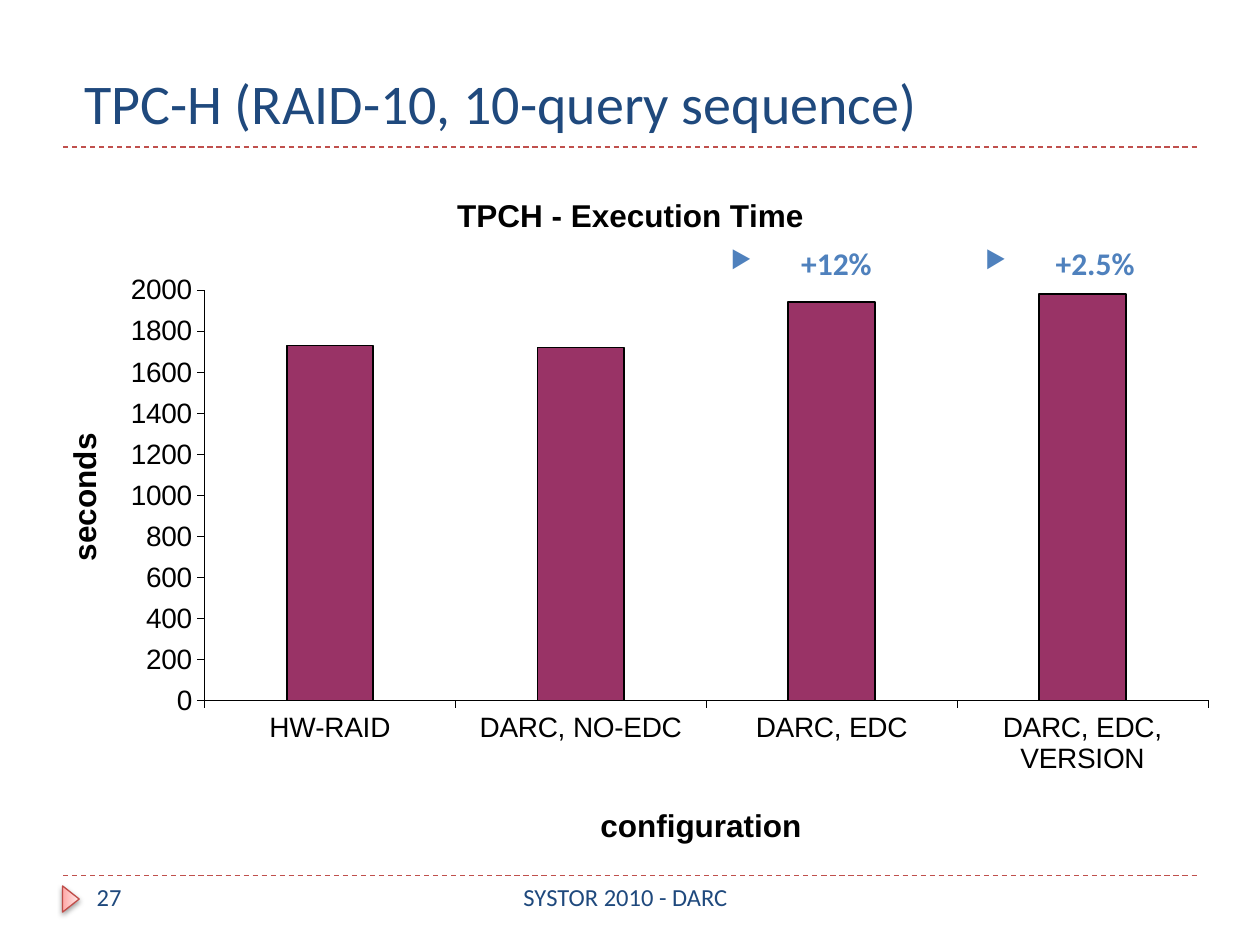
from copy import deepcopy

from lxml.etree import SubElement
from pptx import Presentation
from pptx.chart.data import CategoryChartData
from pptx.dml.color import RGBColor
from pptx.enum.chart import XL_CHART_TYPE, XL_TICK_MARK
from pptx.enum.dml import MSO_LINE
from pptx.enum.shapes import MSO_CONNECTOR, MSO_SHAPE
from pptx.enum.text import MSO_ANCHOR, PP_ALIGN
from pptx.oxml.ns import qn
from pptx.util import Pt

NAVY = RGBColor(0x1F, 0x49, 0x7D)
BLUE = RGBColor(0x4F, 0x81, 0xBD)
RED = RGBColor(0xC0, 0x50, 0x4D)
MARKER_EDGE = RGBColor(0xBF, 0x4C, 0x48)
MARKER_STOPS = [
    (0, RGBColor(0xFF, 0xA6, 0xA5)),
    (0.35, RGBColor(0xFF, 0xC0, 0xBF)),
    (1, RGBColor(0xFF, 0xE7, 0xE7)),
]
PLUM = RGBColor(0x99, 0x33, 0x66)
BLACK = RGBColor(0, 0, 0)
WHITE = RGBColor(0xFF, 0xFF, 0xFF)


def place(element, position, **fractions):
    """Give a chart title or plot area a manual layout, as fractions of the chart."""
    for old_layout in element.findall(qn("c:layout")):
        element.remove(old_layout)
    layout = SubElement(element, qn("c:layout"))
    element.insert(position, layout)
    manual = SubElement(layout, qn("c:manualLayout"))
    if "w" in fractions:
        SubElement(manual, qn("c:layoutTarget")).set("val", "inner")
    for name in ("x", "y"):
        SubElement(manual, qn(f"c:{name}Mode")).set("val", "edge")
    for name, value in fractions.items():
        SubElement(manual, qn(f"c:{name}")).set("val", str(value))


def paint_white(element, *following):
    """Fill a chart area white, keeping its properties ahead of the following tags."""
    properties = SubElement(element, qn("c:spPr"))
    for child in element:
        if child.tag in [qn(tag) for tag in following]:
            child.addprevious(properties)
            break
    fill = SubElement(properties, qn("a:solidFill"))
    SubElement(fill, qn("a:srgbClr")).set("val", str(WHITE))
    line = SubElement(properties, qn("a:ln"))
    SubElement(line, qn("a:noFill"))


class SlideBuilder:
    text_font = "Calibri"
    chart_font = "Arial"

    def __init__(self, slide):
        self.slide = slide

    def style(self, font, name, size, color, bold=False):
        font.name = name
        font.size = Pt(size)
        font.color.rgb = color
        font.bold = bold

    def rule(self, top):
        line = self.slide.shapes.add_connector(
            MSO_CONNECTOR.STRAIGHT, Pt(36), Pt(top), Pt(684), Pt(top))
        line.line.color.rgb = RED
        line.line.width = Pt(0.75)
        line.line.dash_style = MSO_LINE.DASH
        SubElement(line._element.spPr, qn("a:effectLst"))

    def marker(self, left, top, width, height):
        shape = self.slide.shapes.add_shape(
            MSO_SHAPE.ISOSCELES_TRIANGLE, Pt(left), Pt(top), Pt(width), Pt(height))
        shape.rotation = 90
        shape.line.color.rgb = MARKER_EDGE
        shape.line.width = Pt(0.75)
        shape.fill.gradient()
        shape.fill.gradient_angle = 90
        stop_list = shape._element.spPr.find(".//" + qn("a:gsLst"))
        stop_list.append(deepcopy(stop_list[0]))
        for stop, (position, color) in zip(shape.fill.gradient_stops, MARKER_STOPS):
            stop.position = position
            stop.color.rgb = color
        shape.shadow.inherit = False
        effects = shape._element.spPr.find(qn("a:effectLst"))
        shadow = SubElement(effects, qn("a:outerShdw"), blurRad=str(Pt(3.1)),
                            dist=str(Pt(1.6)), dir="5400000", rotWithShape="0")
        shadow_color = SubElement(shadow, qn("a:srgbClr"), val=str(BLACK))
        SubElement(shadow_color, qn("a:alpha"), val="38000")

    def text(self, words, left, top, width, height, size, color=NAVY, bold=False,
             align=PP_ALIGN.LEFT, anchor=MSO_ANCHOR.TOP, bullet=False):
        box = self.slide.shapes.add_textbox(Pt(left), Pt(top), Pt(width), Pt(height))
        frame = box.text_frame
        frame.word_wrap = True
        frame.vertical_anchor = anchor
        paragraph = frame.paragraphs[0]
        paragraph.alignment = align
        if bullet:
            self.bullet(paragraph, color)
        run = paragraph.add_run()
        run.text = words
        self.style(run.font, self.text_font, size, color, bold)

    def bullet(self, paragraph, color):
        properties = paragraph._p.get_or_add_pPr()
        properties.set("marL", str(Pt(40.3)))
        properties.set("indent", str(Pt(-40.3)))
        bullet_color = SubElement(properties, qn("a:buClr"))
        SubElement(bullet_color, qn("a:srgbClr"), val=str(color))
        SubElement(properties, qn("a:buSzPct"), val="76000")
        SubElement(properties, qn("a:buChar"), char="▶")

    def chart_title(self, title, words, x, y):
        run = title.text_frame.paragraphs[0].add_run()
        run.text = words
        self.style(run.font, self.chart_font, 18, BLACK, bold=True)
        place(title._element, 1, x=x, y=y)

    def axis(self, axis, words, x, y):
        axis.has_major_gridlines = False
        axis.major_tick_mark = XL_TICK_MARK.OUTSIDE
        axis.minor_tick_mark = XL_TICK_MARK.NONE
        axis.format.line.color.rgb = BLACK
        axis.format.line.width = Pt(0.25)
        self.style(axis.tick_labels.font, self.chart_font, 16, BLACK)
        self.chart_title(axis.axis_title, words, x, y)

    def column_chart(self, categories, values, left, top, width, height):
        data = CategoryChartData()
        data.categories = categories
        data.add_series("Series 1", values)
        chart = self.slide.shapes.add_chart(
            XL_CHART_TYPE.COLUMN_CLUSTERED, Pt(left), Pt(top), Pt(width), Pt(height),
            data).chart
        self.style(chart.font, self.chart_font, 18, BLACK)
        chart.has_legend = False
        chart.has_title = True
        self.chart_title(chart.chart_title, "TPCH - Execution Time", 0.35, 0.03)
        self.axis(chart.category_axis, "configuration", 0.47, 0.9)
        self.axis(chart.value_axis, "seconds", 0.02, 0.37)
        chart.value_axis.minimum_scale = 0
        chart.value_axis.maximum_scale = 2000
        chart.value_axis.major_unit = 200

        plot = chart.plots[0]
        plot.gap_width = 190
        plot.vary_by_categories = False
        series = plot.series[0]
        series.format.fill.solid()
        series.format.fill.fore_color.rgb = PLUM
        series.format.line.color.rgb = BLACK
        series.format.line.width = Pt(1)

        chart_space = chart._chartSpace
        plot_area = chart_space.find(".//" + qn("c:plotArea"))
        place(plot_area, 0, x=0.143, y=0.174, w=0.841, h=0.585)
        paint_white(plot_area)
        paint_white(chart_space, "c:txPr", "c:externalData")


def main():
    presentation = Presentation()
    presentation.slide_width = Pt(720)
    presentation.slide_height = Pt(540)
    builder = SlideBuilder(presentation.slides.add_slide(presentation.slide_layouts[6]))

    for top in (500.4, 84):
        builder.rule(top)
    builder.marker(33, 509, 15, 9.5)
    builder.text("TPC-H (RAID-10, 10-query sequence)", 41, 9, 648, 72, 32,
                 anchor=MSO_ANCHOR.BOTTOM)
    builder.column_chart(
        ["HW-RAID", "DARC, NO-EDC", "DARC, EDC", "DARC, EDC, VERSION"],
        [1730, 1720, 1940, 1980], 19.4, 96, 681.8, 401)
    for words, left in (("+2.5%", 555.8), ("+12%", 410.4)):
        builder.text(words, left, 136, 108.7, 29, 18, BLUE, bold=True, bullet=True)
    builder.text("27", 48.2, 500.4, 156, 29, 14)
    builder.text("SYSTOR 2010 - DARC", 210.2, 500.4, 294.5, 29, 14,
                 align=PP_ALIGN.CENTER)

    presentation.save("out.pptx")


if __name__ == "__main__":
    main()
